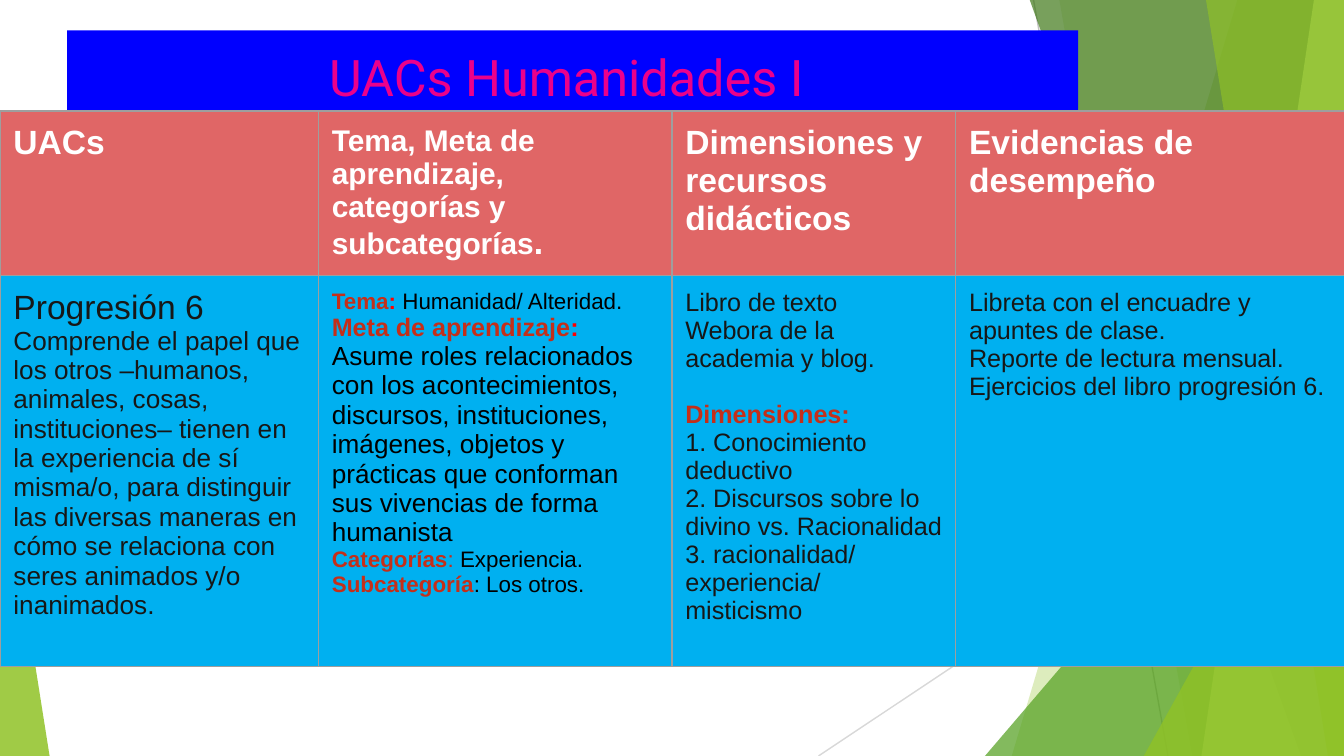
from lxml import etree
from pptx import Presentation
from pptx.dml.color import RGBColor
from pptx.enum.shapes import MSO_CONNECTOR, MSO_SHAPE
from pptx.enum.text import MSO_ANCHOR, PP_ALIGN
from pptx.oxml.ns import qn
from pptx.util import Pt

LINE = MSO_CONNECTOR.STRAIGHT
TRIANGLE = MSO_SHAPE.ISOSCELES_TRIANGLE
RECT = MSO_SHAPE.RECTANGLE
MIDDLE = MSO_ANCHOR.MIDDLE
TOP = MSO_ANCHOR.TOP
CENTER = PP_ALIGN.CENTER
JUSTIFY = PP_ALIGN.JUSTIFY
INSET = 7.2

C = {
    "gray": "BFBFBF", "pale": "D8D8D8", "border": "9E9E9E",
    "lime": "90C226", "green": "54A021", "forest": "3F7818", "light": "BFE471",
    "blue": "0000FF", "pink": "EB008B", "coral": "E06666", "sky": "00B0F0",
    "white": "FFFFFF", "black": "000000", "ink": "171717",
    "brick": "C42F1A", "red": "FF0000",
}

HEADERS = [
    [("UACs", 18)],
    [("Tema, Meta de aprendizaje, categorías y subcategorías", 16), (".", 18)],
    [("Dimensiones y recursos didácticos", 18)],
    [("Evidencias de desempeño", 18)],
]
INK = dict(size=13.5, color="ink")
LABEL = dict(color="brick", bold=True)
BODY = [
    [
        ([("Progresión 6", dict(size=18, color="ink"))], {}),
        ([("Comprende el papel que los otros –humanos, animales, cosas, "
           "instituciones– tienen en la experiencia de sí misma/o, para "
           "distinguir las diversas maneras en cómo se relaciona con seres "
           "animados y/o inanimados.", dict(size=14, color="ink"))], {}),
    ],
    [
        ([("Tema", dict(LABEL, size=12)),
          (":", dict(size=12, color="red", bold=True)),
          (" Humanidad/ Alteridad.", dict(size=12))], {}),
        ([("Meta de aprendizaje", dict(LABEL, size=13.5)),
          (":", dict(size=13.5, color="red", bold=True))], {}),
        ([("Asume roles relacionados con los acontecimientos, discursos, "
           "instituciones, imágenes, objetos y prácticas que conforman sus "
           "vivencias de forma humanista", dict(size=14))], {}),
        ([("Categorías", dict(LABEL, size=12)),
          (":", dict(size=12, color="brick")),
          (" Experiencia.", dict(size=12))], dict(align=JUSTIFY)),
        ([("Subcategoría", dict(LABEL, size=12)),
          (": Los otros.", dict(size=12))], dict(align=JUSTIFY)),
    ],
    [
        ([("Libro de texto", INK)], {}),
        ([("Webora de la academia y blog.", INK)], {}),
        ([("Dimensiones:", dict(LABEL, size=13.5))], dict(before=15)),
        ([("1. Conocimiento deductivo", INK)], {}),
        ([("2. Discursos sobre lo divino vs. Racionalidad", INK)], {}),
        ([("3. racionalidad/ experiencia/ misticismo", INK)], {}),
    ],
    [
        ([("Libreta con el encuadre y apuntes de clase.", INK)], {}),
        ([("Reporte de lectura mensual.", INK)], {}),
        ([("Ejercicios del libro progresión 6.", INK)], {}),
    ],
]


def rgb(name):
    """Return the palette colour with this name."""
    return RGBColor.from_string(C[name])


def add_run(p, text, size=12, color="black", bold=False, font="Arial"):
    """Add formatted text to a paragraph."""
    r = p.add_run()
    r.text = text
    r.font.size, r.font.bold, r.font.name = Pt(size), bold, font
    r.font.color.rgb = rgb(color)


def write(tf, paragraphs):
    """Fill a text frame with paragraphs of formatted runs."""
    for i, (runs, fmt) in enumerate(paragraphs):
        p = tf.add_paragraph() if i else tf.paragraphs[0]
        p.alignment = fmt.get("align")
        p.space_before = Pt(fmt.get("before", 0))
        p.line_spacing = fmt.get("spacing", 1.0)
        for text, style in runs:
            add_run(p, text, **style)


def paint(sp, color, alpha=100):
    """Give a shape a plain fill with the given opacity."""
    sp.shadow.inherit = False
    sp.line.fill.background()
    sp.fill.solid()
    sp.fill.fore_color.rgb = rgb(color)
    if alpha < 100:
        clr = sp.fill._xPr.find(".//" + qn("a:srgbClr"))
        etree.SubElement(clr, qn("a:alpha"), val=str(alpha * 1000))


def add_line(slide, x1, y1, x2, y2, color):
    """Draw a thin straight line."""
    ln = slide.shapes.add_connector(LINE, Pt(x1), Pt(y1), Pt(x2), Pt(y2))
    ln.line.color.rgb = rgb(color)
    ln.line.width = Pt(0.75)
    etree.SubElement(ln._element.spPr, qn("a:effectLst"))


def add_band(slide, right, bottom, top_x, bottom_x, color, alpha):
    """Draw a slanted band that reaches the right edge."""
    fb = slide.shapes.build_freeform(Pt(top_x), Pt(-0.5))
    fb.add_line_segments([(Pt(right), Pt(-0.5)), (Pt(right), Pt(bottom)),
                          (Pt(bottom_x), Pt(bottom))], close=True)
    paint(fb.convert_to_shape(), color, alpha)


def add_corner(slide, x, w, h, bottom, apex, color, alpha):
    """Draw a right triangle standing on the bottom edge."""
    sp = slide.shapes.add_shape(TRIANGLE, Pt(x), Pt(bottom - h), Pt(w), Pt(h))
    sp.adjustments[0] = apex
    paint(sp, color, alpha)


def add_facets(slide, x, y, w, h):
    """Draw the green faceted background within a box."""
    right, bottom = x + w, y + h
    add_line(slide, right - 166.3, y, right - 94.3, bottom, "gray")
    add_line(slide, right, y + 217.5, right - 281.5, bottom, "pale")
    add_band(slide, right, bottom, right - 57, right - 178, "lime", 30)
    add_band(slide, right, bottom, right - 152.6, right - 81.4, "lime", 20)
    add_corner(slide, right - 192.3, 192.3, 225, bottom, 1, "green", 72)
    for top, base, color, alpha in [(168.5, 23, "forest", 70),
                                    (16, 76.3, "light", 70),
                                    (74, 8.6, "lime", 65)]:
        add_band(slide, right, bottom, right - top, right - base, color, alpha)
    add_corner(slide, right - 107.3, 107.3, 193, bottom, 1, "lime", 80)
    add_corner(slide, x, 26.6, 168, bottom, 0, "lime", 85)


def add_title(slide, x, y, w, h):
    """Draw the title bar."""
    sp = slide.shapes.add_shape(RECT, Pt(x), Pt(y), Pt(w), Pt(h))
    paint(sp, "blue")
    tf = sp.text_frame
    tf.word_wrap = True
    tf.vertical_anchor = MIDDLE
    tf.margin_left = tf.margin_right = tf.margin_top = tf.margin_bottom = Pt(INSET)
    style = dict(size=27, color="pink", font="Roboto")
    write(tf, [([("UACs Humanidades I ", style)], dict(align=CENTER, spacing=0.9))])


def format_cell(cell, fill):
    """Set borders, fill and margins of a cell."""
    tc_pr = cell._tc.get_or_add_tcPr()
    for side in ("lnL", "lnR", "lnT", "lnB"):
        ln = etree.SubElement(tc_pr, qn("a:" + side), w=str(Pt(0.75)))
        solid = etree.SubElement(ln, qn("a:solidFill"))
        etree.SubElement(solid, qn("a:srgbClr"), val=C["border"])
    cell.fill.solid()
    cell.fill.fore_color.rgb = rgb(fill)
    cell.vertical_anchor = TOP
    cell.margin_left = cell.margin_right = Pt(INSET)
    cell.margin_top = cell.margin_bottom = Pt(INSET)


def add_plan(slide, x, y, widths, heights):
    """Draw the table of the learning plan."""
    table = slide.shapes.add_table(len(heights), len(widths), Pt(x), Pt(y),
                                   Pt(sum(widths)), Pt(sum(heights))).table
    table.first_row = table.horz_banding = False
    for row, height in zip(table.rows, heights):
        row.height = Pt(height)
    for i, width in enumerate(widths):
        table.columns[i].width = Pt(width)
        head, body = table.cell(0, i), table.cell(1, i)
        format_cell(head, "coral")
        format_cell(body, "sky")
        runs = [(text, dict(size=size, color="white", bold=True))
                for text, size in HEADERS[i]]
        write(head.text_frame, [(runs, {})])
        write(body.text_frame, BODY[i])


def main():
    """Build and save the slide."""
    prs = Presentation()
    prs.slide_width, prs.slide_height = Pt(720), Pt(405)
    slide = prs.slides.add_slide(prs.slide_layouts[6])
    add_facets(slide, 0, 0, 720, 405)
    add_title(slide, 36, 16.2, 541.6, 53.5)
    add_plan(slide, 0, 59.5, [170.6, 189.4, 152, 211.6], [88, 209.5])
    prs.save("out.pptx")


if __name__ == "__main__":
    main()
